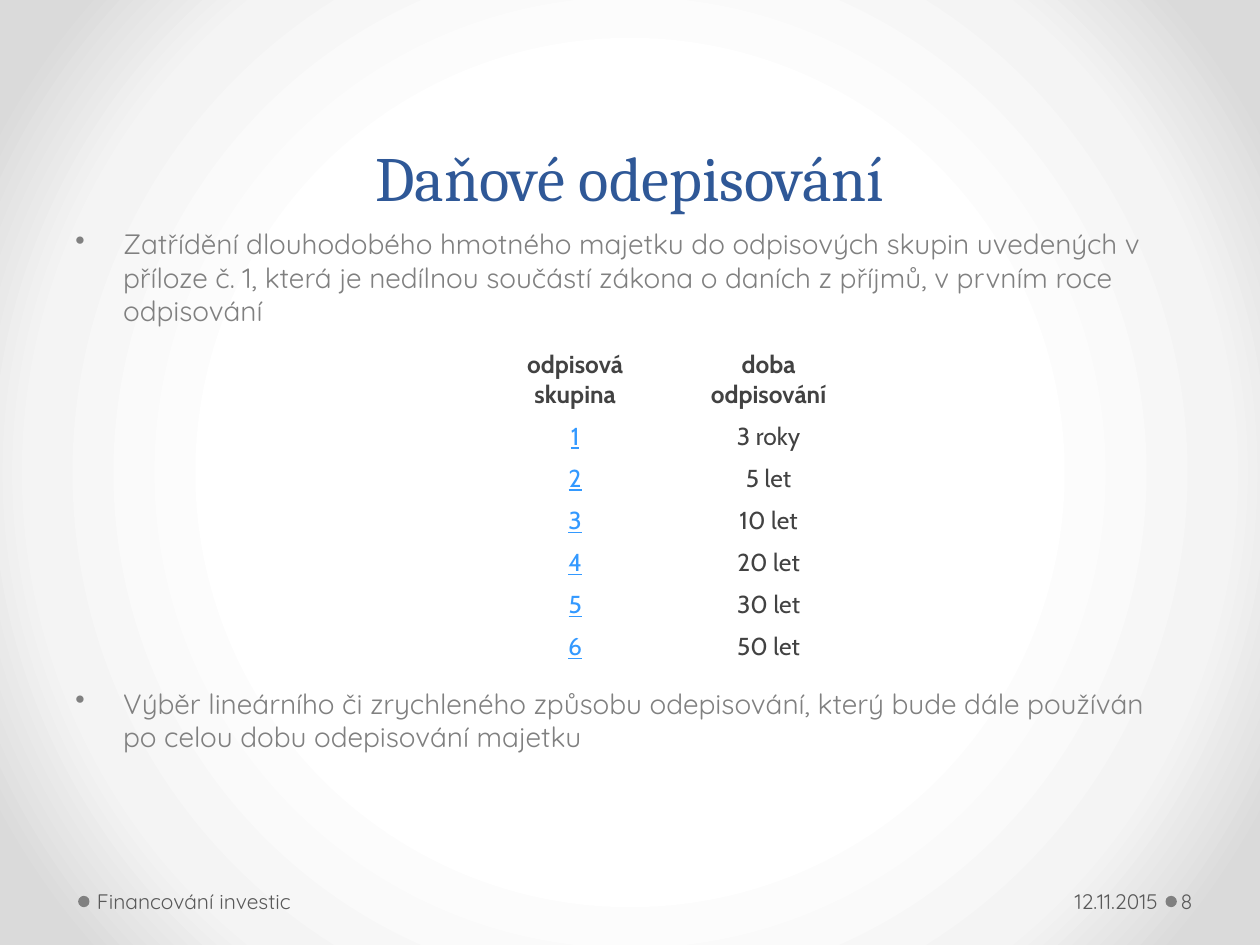
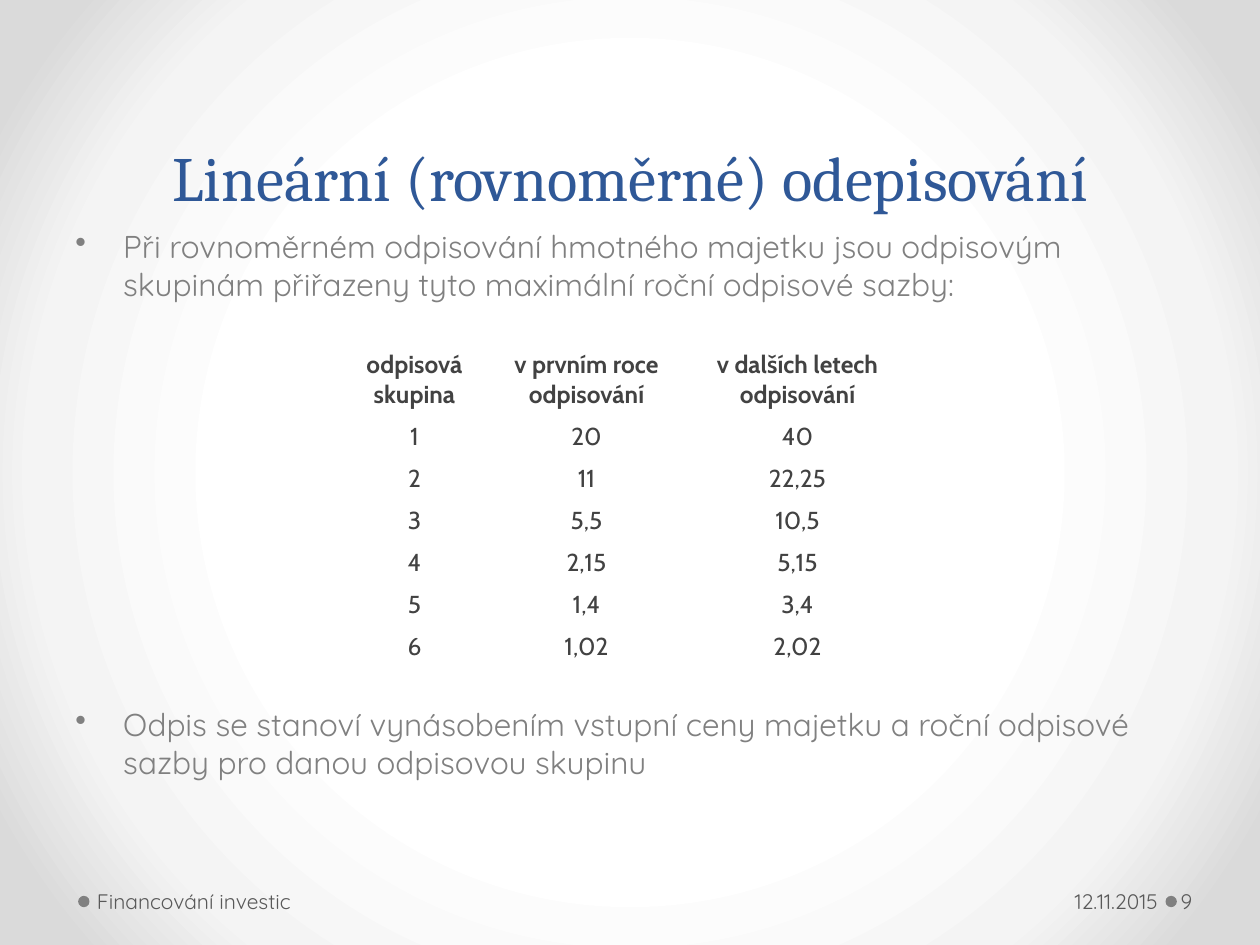
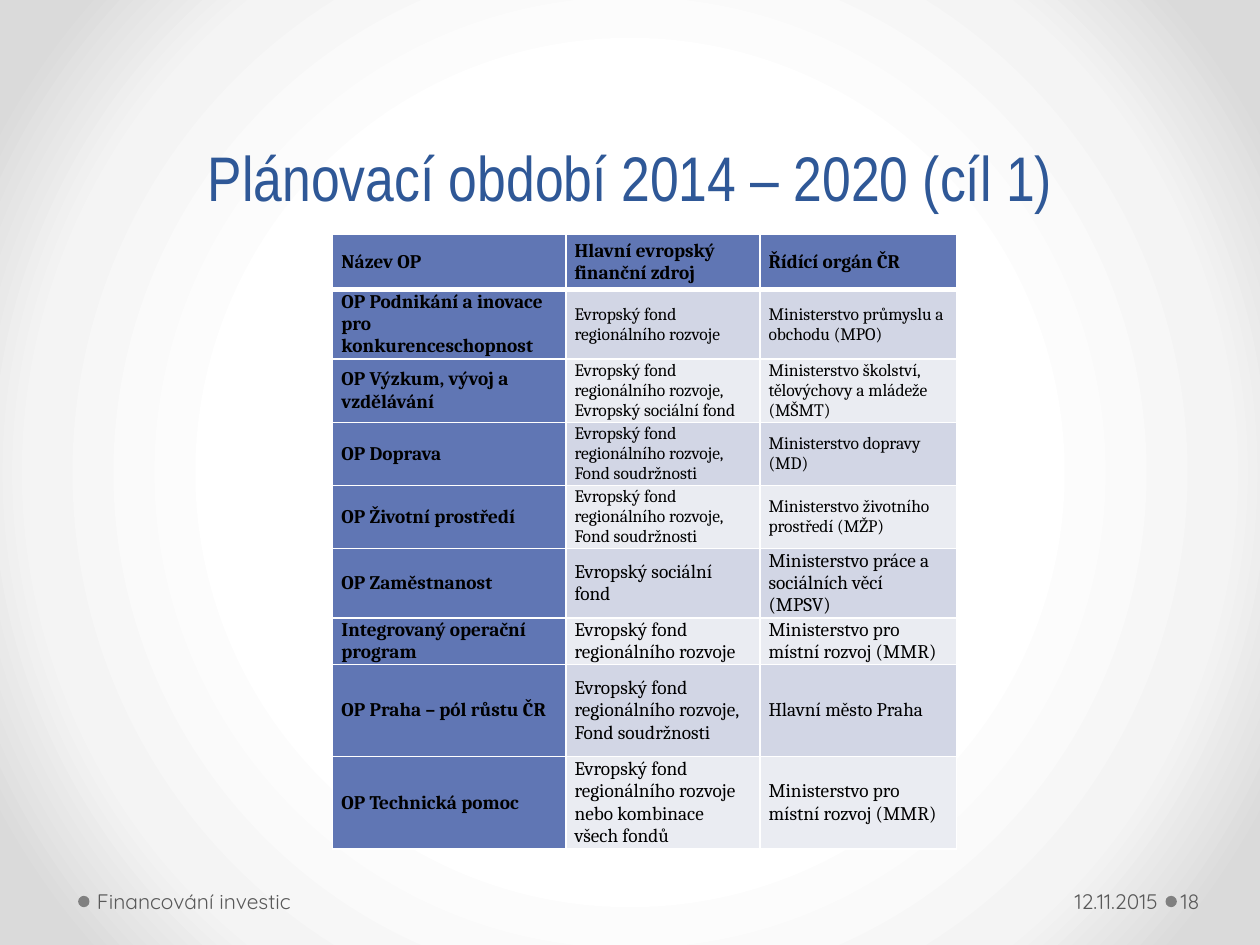
from pptx import Presentation
from pptx.dml.color import RGBColor
from pptx.enum.shapes import MSO_SHAPE
from pptx.enum.text import MSO_ANCHOR, MSO_AUTO_SIZE, PP_ALIGN
from pptx.oxml import parse_xml
from pptx.oxml.ns import nsdecls, qn
from pptx.util import Inches, Pt

OVAL = MSO_SHAPE.OVAL
LEFT, CENTER, RIGHT = PP_ALIGN.LEFT, PP_ALIGN.CENTER, PP_ALIGN.RIGHT
TOP, MIDDLE, BOTTOM = MSO_ANCHOR.TOP, MSO_ANCHOR.MIDDLE, MSO_ANCHOR.BOTTOM
NO_FIT = MSO_AUTO_SIZE.NONE

NAVY = RGBColor(0x2F, 0x58, 0x97)
GRAY = RGBColor(0x80, 0x80, 0x80)
FOOTER_GRAY = RGBColor(0x59, 0x59, 0x59)
CELL_GRAY = RGBColor(0x42, 0x42, 0x42)
LINK_BLUE = RGBColor(0x33, 0x99, 0xFF)
BLACK = RGBColor(0x00, 0x00, 0x00)
WHITE = RGBColor(0xFF, 0xFF, 0xFF)
HEAD_BLUE = RGBColor(0x60, 0x76, 0xB4)
BAND_DARK = RGBColor(0xD2, 0xD6, 0xE5)
BAND_LIGHT = RGBColor(0xEA, 0xEC, 0xF2)
BACKGROUND_STOPS = [(50, WHITE), (76, RGBColor(0xF4, 0xF4, 0xF4)),
                    (92, RGBColor(0xDA, 0xDA, 0xDA))]

SERIF, NARROW, SANS, TABLE_FONT = "Cambria", "Arial Narrow", "Quicksand", "Cabin"
NO_TABLE_STYLE = "{2D5ABB26-0587-4C30-8999-92F81FD0307C}"
CELL_MARGINS = (0.1, 0.05, 0.1, 0.05)
TIGHT_MARGINS = (0.07, 0, 0.07, 0)
RATE_ROWS = [0.4] + [0.25] * 6


class Deck:
    """Shared style and the slide being built."""

    def __init__(self):
        self.prs = Presentation()
        self.prs.slide_width, self.prs.slide_height = Inches(10), Inches(7.5)
        self.slide = None
        self.background()

    def background(self):
        master = self.prs.slide_master
        master.background.fill.gradient()
        grad = master.element.xpath(".//p:bgPr/a:gradFill")[0]
        stops = "".join(f'<a:gs pos="{pos * 1000}"><a:srgbClr val="{color}"/></a:gs>'
                        for pos, color in BACKGROUND_STOPS)
        new_grad = parse_xml(
            f'<a:gradFill {nsdecls("a")} rotWithShape="1"><a:gsLst>{stops}</a:gsLst>'
            '<a:path path="circle"><a:fillToRect l="50000" t="50000" r="50000" b="50000"/>'
            '</a:path></a:gradFill>')
        grad.getparent().replace(grad, new_grad)

    def new_slide(self, title, number, font=SERIF):
        self.slide = self.prs.slides.add_slide(self.prs.slide_layouts[5])
        self.title(title, font)
        self.footer(number)

    def format(self, p, font, size, color, bold=False, align=LEFT, underline=False):
        p.alignment = align
        for r in p.runs:
            r.font.name, r.font.size, r.font.bold = font, Pt(size), bold
            r.font.color.rgb = color
            r.font.underline = underline

    def title(self, text, font):
        sp = self.slide.shapes.title
        sp.left, sp.top, sp.width, sp.height = Inches(0.5), 0, Inches(9), Inches(1.75)
        tf = sp.text_frame
        tf.text = text
        tf.auto_size, tf.vertical_anchor, tf.word_wrap = NO_FIT, BOTTOM, True
        p = tf.paragraphs[0]
        p.line_spacing = 2.0
        self.format(p, font, 36, NAVY, align=CENTER)

    def text_box(self, x, y, w, h, text, margins=CELL_MARGINS, anchor=TOP):
        box = self.slide.shapes.add_textbox(Inches(x), Inches(y), Inches(w), Inches(h))
        tf = box.text_frame
        tf.text = text
        tf.word_wrap, tf.vertical_anchor = True, anchor
        (tf.margin_left, tf.margin_top,
         tf.margin_right, tf.margin_bottom) = map(Inches, margins)
        return tf

    def dot(self, x):
        sp = self.slide.shapes.add_shape(OVAL, Inches(x), Inches(7.11),
                                         Inches(0.09), Inches(0.09))
        sp.shadow.inherit = False
        sp.fill.solid()
        sp.fill.fore_color.rgb = GRAY
        sp.line.fill.background()

    def footer(self, number):
        for x in (9.25, 0.62):
            self.dot(x)
        for x, w, text, left, right, align in (
                (6.96, 2.28, "12.11.2015", 0.1, 0.05, RIGHT),
                (0.72, 3.33, "Financování investic", 0.05, 0.1, LEFT),
                (9.34, 0.61, str(number), 0.03, 0.05, LEFT)):
            tf = self.text_box(x, 6.95, w, 0.4, text, (left, 0.05, right, 0.05), MIDDLE)
            self.format(tf.paragraphs[0], SANS, 12, FOOTER_GRAY, align=align)

    def bullets(self, items, size, gap):
        """Bullets kept apart by a gap in points that leaves room for a table."""
        tf = self.text_box(0.5, 1.75, 9, 4.95, "\n".join(items))
        for i, p in enumerate(tf.paragraphs):
            self.format(p, SANS, size, GRAY)
            p.line_spacing = Pt(size * 1.2)
            p.space_before = Pt(gap if i else 0)
            pPr = p._p.get_or_add_pPr()
            pPr.set("marL", str(Inches(0.38)))
            pPr.set("indent", str(-Inches(0.38)))
            pPr.append(parse_xml(f'<a:buChar {nsdecls("a")} char="•"/>'))

    def table(self, x, y, cols, heights, rows):
        frame = self.slide.shapes.add_table(
            len(rows), len(cols), Inches(x), Inches(y),
            Inches(sum(cols)), Inches(sum(heights)))
        tbl = frame.table
        tbl.first_row = tbl.horz_banding = False
        tbl._tbl.tblPr.find(qn("a:tableStyleId")).text = NO_TABLE_STYLE
        for col, w in zip(tbl.columns, cols):
            col.width = Inches(w)
        for row, h in zip(tbl.rows, heights):
            row.height = Inches(h)
        for i, row in enumerate(rows):
            for j, text in enumerate(row):
                tbl.cell(i, j).text_frame.text = text
        return tbl

    def cell(self, cell, margins, anchor, fill=None):
        (cell.margin_left, cell.margin_top,
         cell.margin_right, cell.margin_bottom) = map(Inches, margins)
        cell.vertical_anchor = anchor
        if fill is None:
            cell.fill.background()
        else:
            cell.fill.solid()
            cell.fill.fore_color.rgb = fill

    def borders(self, cell, bottom):
        tcPr = cell._tc.get_or_add_tcPr()
        for k, (side, width) in enumerate(
                (("L", 1), ("R", 1), ("T", 1), ("B", bottom))):
            tcPr.insert(k, parse_xml(
                f'<a:ln{side} {nsdecls("a")} w="{Pt(width)}"><a:solidFill>'
                f'<a:srgbClr val="{WHITE}"/></a:solidFill></a:ln{side}>'))

    def rate_table(self, x, cols, rows, linked=False):
        """Plain centred table; linked marks the group numbers as links."""
        tbl = self.table(x, 2.73, cols, RATE_ROWS, rows)
        for i, row in enumerate(tbl.rows):
            for j, cell in enumerate(row.cells):
                head, link = i == 0, linked and i > 0 and j == 0
                self.cell(cell, CELL_MARGINS, MIDDLE if head else TOP)
                self.format(cell.text_frame.paragraphs[0], TABLE_FONT, 14,
                            LINK_BLUE if link else CELL_GRAY, head, CENTER, link)

    def programme_table(self, x, y, cols, heights, rows, small_rows):
        """Banded table with a coloured header row and first column."""
        tbl = self.table(x, y, cols, heights, rows)
        for i, row in enumerate(tbl.rows):
            band = BAND_DARK if i % 2 else BAND_LIGHT
            for j, cell in enumerate(row.cells):
                head = i == 0 or j == 0
                self.cell(cell, TIGHT_MARGINS, MIDDLE, HEAD_BLUE if head else band)
                self.borders(cell, 3 if i == 0 else 1)
                p = cell.text_frame.paragraphs[0]
                p.space_after = Pt(6)
                size = 10 if i in small_rows and not head else 11
                self.format(p, SERIF, size, BLACK, head)


def main():
    deck = Deck()

    # Tax depreciation
    deck.new_slide("Daňové odepisování", 8)
    deck.bullets([
        "Zatřídění dlouhodobého hmotného majetku do odpisových skupin uvedených v "
        "příloze č. 1, která je nedílnou součástí zákona o daních z příjmů, v prvním "
        "roce odpisování",
        "Výběr lineárního či zrychleného způsobu odepisování, který bude dále používán "
        "po celou dobu odepisování majetku"], 16, 205)
    periods = ["3 roky", "5 let", "10 let", "20 let", "30 let", "50 let"]
    deck.rate_table(3.82, [1.49, 1.58],
                    [("odpisová\vskupina", "doba\vodpisování")]
                    + [(str(n), period) for n, period in enumerate(periods, 1)],
                    linked=True)

    # Linear depreciation
    deck.new_slide("Lineární (rovnoměrné) odepisování", 9)
    deck.bullets([
        "Při rovnoměrném odpisování hmotného majetku jsou odpisovým skupinám přiřazeny "
        "tyto maximální roční odpisové sazby:",
        "Odpis se stanoví vynásobením vstupní ceny majetku a roční odpisové sazby pro "
        "danou odpisovou skupinu"], 18, 230)
    rates = [("20", "40"), ("11", "22,25"), ("5,5", "10,5"),
             ("2,15", "5,15"), ("1,4", "3,4"), ("1,02", "2,02")]
    deck.rate_table(2.72, [1.14, 1.59, 1.76],
                    [("odpisová\vskupina", "v prvním roce\vodpisování",
                      "v dalších letech\vodpisování")]
                    + [(str(n), *rate) for n, rate in enumerate(rates, 1)])

    # Operational programmes
    deck.new_slide("Plánovací období 2014 – 2020 (cíl 1)", 18, NARROW)
    regional = "Evropský fond regionálního rozvoje"
    social = "Evropský sociální fond"
    cohesion = f"{regional}, Fond soudržnosti"
    mmr = "Ministerstvo pro místní rozvoj (MMR)"
    programmes = [
        ("Název OP", "Hlavní evropský finanční zdroj", "Řídící orgán ČR"),
        ("OP Podnikání a inovace pro konkurenceschopnost", regional,
         "Ministerstvo průmyslu a obchodu (MPO)"),
        ("OP Výzkum, vývoj a vzdělávání", f"{regional}, {social}",
         "Ministerstvo školství, tělovýchovy a mládeže (MŠMT)"),
        ("OP Doprava", cohesion, "Ministerstvo dopravy (MD)"),
        ("OP Životní prostředí", cohesion, "Ministerstvo životního prostředí (MŽP)"),
        ("OP Zaměstnanost", social, "Ministerstvo práce a sociálních věcí (MPSV)"),
        ("Integrovaný operační program", regional, mmr),
        ("OP Praha – pól růstu ČR", cohesion, "Hlavní město Praha"),
        ("OP Technická pomoc", f"{regional} nebo kombinace všech fondů", mmr),
    ]
    deck.programme_table(2.64, 1.86, [1.85, 1.54, 1.56],
                         [0.44, 0.55, 0.5, 0.5, 0.5, 0.55, 0.37, 0.73, 0.73],
                         programmes, small_rows=range(1, 5))

    deck.prs.save("out.pptx")


if __name__ == "__main__":
    main()
